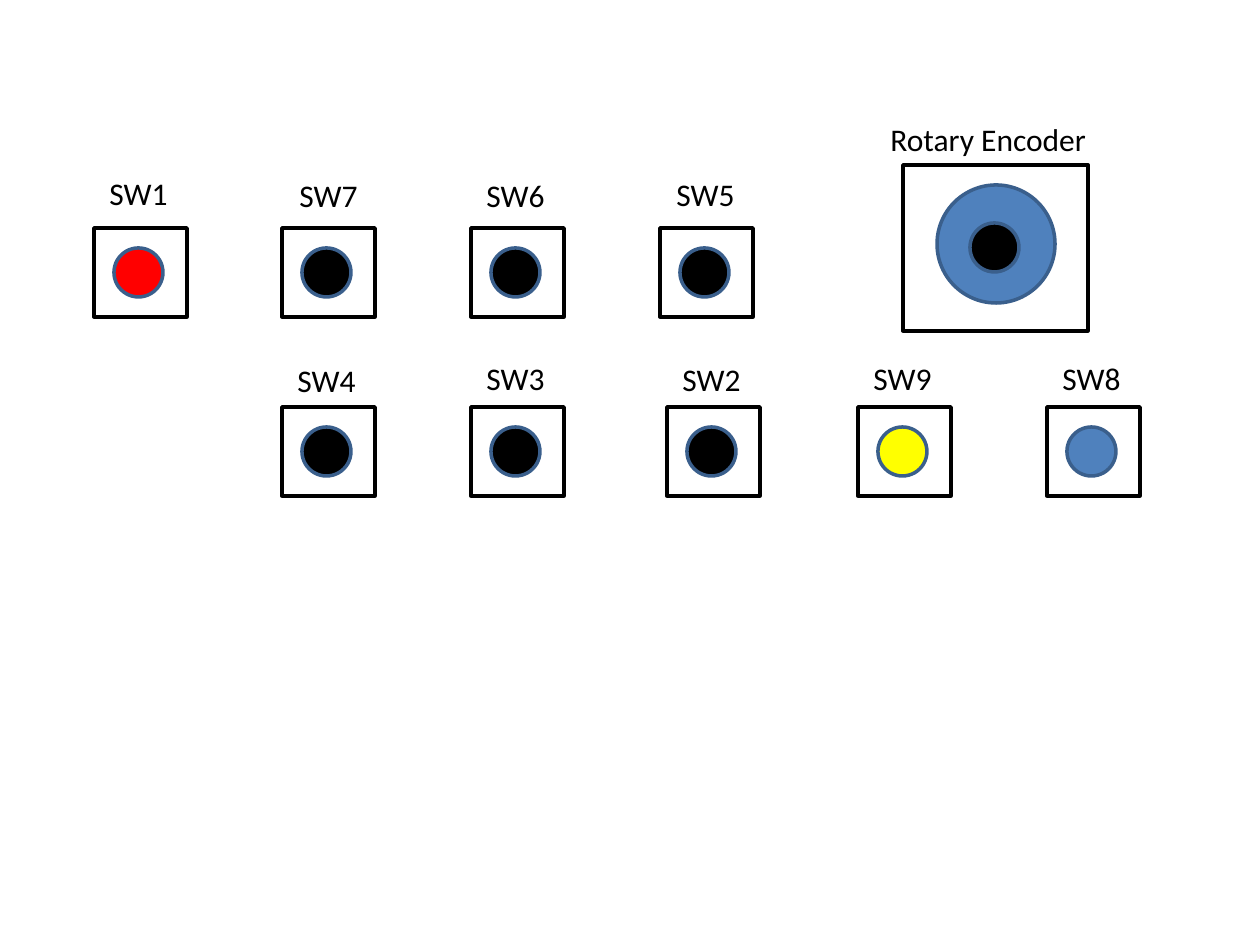
from pptx import Presentation
from pptx.dml.color import RGBColor
from pptx.enum.shapes import MSO_SHAPE as Preset
from pptx.enum.text import MSO_AUTO_SIZE as AutoSize
from pptx.util import Pt

PX = 914400 / 126
THEME = {
    "font": "Calibri", "label_size": 18, "line_width": 2,
    "black": "000000", "red": "FF0000", "yellow": "FFFF00",
    "blue": "4F81BD", "rim": "3A5F8C",
}


def add_part(preset, box, line, fill=None):
    part = slide.shapes.add_shape(preset, *[round(n * PX) for n in box])
    part.shadow.inherit = False
    part.line.color.rgb = RGBColor.from_string(THEME[line])
    part.line.width = Pt(THEME["line_width"])
    if fill:
        part.fill.solid()
        part.fill.fore_color.rgb = RGBColor.from_string(THEME[fill])
    else:
        part.fill.background()


def add_label(wording, box):
    frame = slide.shapes.add_textbox(*[round(n * PX) for n in box]).text_frame
    frame.word_wrap = False
    frame.auto_size = AutoSize.SHAPE_TO_FIT_TEXT
    frame.text = wording
    font = frame.paragraphs[0].runs[0].font
    font.name = THEME["font"]
    font.size = Pt(THEME["label_size"])
    font.color.rgb = RGBColor.from_string(THEME["black"])


deck = Presentation()
deck.slide_width = round(1260 * PX)
deck.slide_height = round(945 * PX)
slide = deck.slides.add_slide(deck.slide_layouts[6])

UPPER, LOWER = 228, 407
CASE_W, CASE_H = 93, 89
CAP, CAP_INSET = 49, 20
LABEL_W, LABEL_H = 84, 50

switches = [
    ("SW1", 94, UPPER, "red", 97, 168),
    ("SW7", 282, UPPER, "black", 287, 170),
    ("SW6", 471, UPPER, "black", 474, 170),
    ("SW5", 660, UPPER, "black", 664, 169),
    ("SW4", 282, LOWER, "black", 285, 355),
    ("SW3", 471, LOWER, "black", 474, 353),
    ("SW2", 667, LOWER, "black", 670, 354),
    ("SW9", 858, LOWER, "yellow", 861, 353),
    ("SW8", 1047, LOWER, "blue", 1050, 353),
]

for name, left, top, cap_color, label_left, label_top in switches:
    add_part(Preset.RECTANGLE, (left, top, CASE_W, CASE_H), "black")
    add_part(Preset.OVAL, (left + CAP_INSET, top + CAP_INSET, CAP, CAP), "rim", cap_color)

add_part(Preset.RECTANGLE, (903, 165, 185, 166), "black")
add_part(Preset.OVAL, (937, 185, 118, 118), "rim", "blue")
add_part(Preset.OVAL, (970, 223, CAP, CAP), "rim", "black")

for name, left, top, cap_color, label_left, label_top in switches:
    add_label(name, (label_left, label_top, LABEL_W, LABEL_H))
add_label("Rotary Encoder", (878, 114, 223, LABEL_H))

deck.save("out.pptx")
